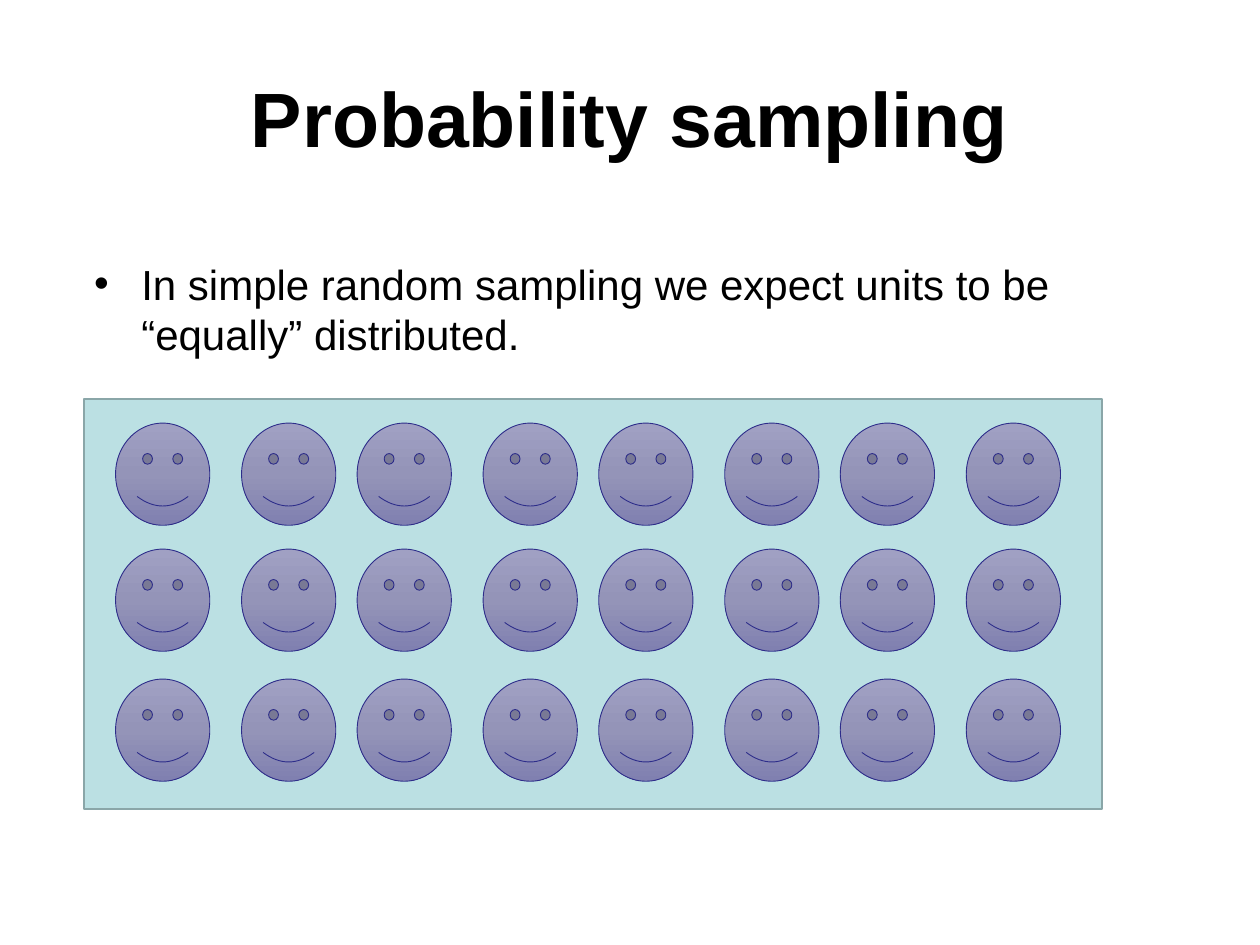
from copy import deepcopy
from itertools import product
from typing import Any, NamedTuple

from lxml.etree import SubElement
from pptx import Presentation
from pptx.dml.color import RGBColor
from pptx.enum.shapes import MSO_SHAPE
from pptx.enum.text import MSO_ANCHOR, PP_ALIGN
from pptx.oxml.ns import qn
from pptx.shapes.autoshape import Shape
from pptx.slide import Slide
from pptx.util import Cm, Pt

COLORS = {
    "text": "000000",
    "panel": "BBE0E3",
    "panel_line": "8AA6A8",
    "face_top": "A0A0C3",
    "face_middle": "9494B8",
    "face_bottom": "8080B0",
    "face_line": "2D2D8A",
}
FACE_GRADIENT = [(0, "face_top"), (0.5, "face_middle"), (1, "face_bottom")]
FACE_WIDTH, FACE_HEIGHT = 1.9, 2.06
FIRST_FACE_LEFT, PAIR_PITCH, FACE_PITCH = 2.33, 4.87, 2.54
PAIR_COUNT = 4
ROW_TOPS = (8.53, 11.07, 13.69)


class Box(NamedTuple):
    left: float
    top: float
    width: float
    height: float


class TextBlock(NamedTuple):
    box: Box
    text: str
    frame_format: dict[str, Any]
    paragraph_format: dict[str, Any]
    font_format: dict[str, Any]
    bullet: str = ""


TITLE = TextBlock(
    Box(1.27, 0.76, 22.86, 3.18),
    "Probability sampling",
    {"vertical_anchor": MSO_ANCHOR.MIDDLE},
    {"alignment": PP_ALIGN.CENTER},
    {"size": Pt(44), "bold": True},
)
STATEMENT = TextBlock(
    Box(1.65, 5.08, 21.39, 2.29),
    "In simple random sampling we expect units to be “equally” distributed.",
    {"vertical_anchor": MSO_ANCHOR.TOP},
    {"space_before": Pt(3)},
    {"size": Pt(24)},
    "•",
)
PANEL = Box(1.7, 8.05, 20.52, 8.26)


def color(name: str) -> RGBColor:
    """Return the named palette colour."""
    return RGBColor.from_string(COLORS[name])


def apply_format(target: Any, values: dict[str, Any]) -> None:
    """Set every attribute in values on the target."""
    for name, value in values.items():
        setattr(target, name, value)


def add_outlined_shape(
    slide: Slide, kind: MSO_SHAPE, box: Box, line_color: str, line_width: float
) -> Shape:
    """Add a preset shape with an outline and no shadow."""
    shape = slide.shapes.add_shape(kind, *map(Cm, box))
    shape.shadow.inherit = False
    shape.line.color.rgb = color(line_color)
    shape.line.width = Pt(line_width)
    return shape


def add_panel(slide: Slide, box: Box) -> None:
    """Add the plain panel behind the faces."""
    shape = add_outlined_shape(slide, MSO_SHAPE.RECTANGLE, box, "panel_line", 1)
    shape.fill.solid()
    shape.fill.fore_color.rgb = color("panel")


def add_face(slide: Slide, box: Box) -> None:
    """Add one smiley face shaded from top to bottom."""
    shape = add_outlined_shape(slide, MSO_SHAPE.SMILEY_FACE, box, "face_line", 0.5)
    shape.fill.gradient()
    shape.fill.gradient_angle = 270
    stop_list = shape._element.spPr.find(".//" + qn("a:gsLst"))
    stop_list.append(deepcopy(stop_list[-1]))
    for stop, (position, name) in zip(shape.fill.gradient_stops, FACE_GRADIENT):
        stop.position = position
        stop.color.rgb = color(name)


def add_text(slide: Slide, block: TextBlock) -> None:
    """Add a wrapped text box, with a hanging bullet if one is given."""
    frame = slide.shapes.add_textbox(*map(Cm, block.box)).text_frame
    apply_format(frame, {"word_wrap": True, **block.frame_format})
    paragraph = frame.paragraphs[0]
    apply_format(paragraph, block.paragraph_format)
    run = paragraph.add_run()
    run.text = block.text
    apply_format(run.font, {"name": "Arial", **block.font_format})
    run.font.color.rgb = color("text")
    if block.bullet:
        properties = paragraph._p.get_or_add_pPr()
        properties.set("marL", str(Cm(0.95)))
        properties.set("indent", str(Cm(-0.95)))
        SubElement(properties, qn("a:buFont"), typeface="Arial")
        SubElement(properties, qn("a:buChar"), char=block.bullet)


def main() -> None:
    """Build and save the slide."""
    presentation = Presentation()
    apply_format(presentation, {"slide_width": Cm(25.4), "slide_height": Cm(19.05)})
    slide = presentation.slides.add_slide(presentation.slide_layouts[6])
    add_panel(slide, PANEL)
    for block in (STATEMENT, TITLE):
        add_text(slide, block)
    for pair, member, top in product(range(PAIR_COUNT), range(2), ROW_TOPS):
        left = FIRST_FACE_LEFT + pair * PAIR_PITCH + member * FACE_PITCH
        add_face(slide, Box(left, top, FACE_WIDTH, FACE_HEIGHT))
    presentation.save("out.pptx")


if __name__ == "__main__":
    main()
